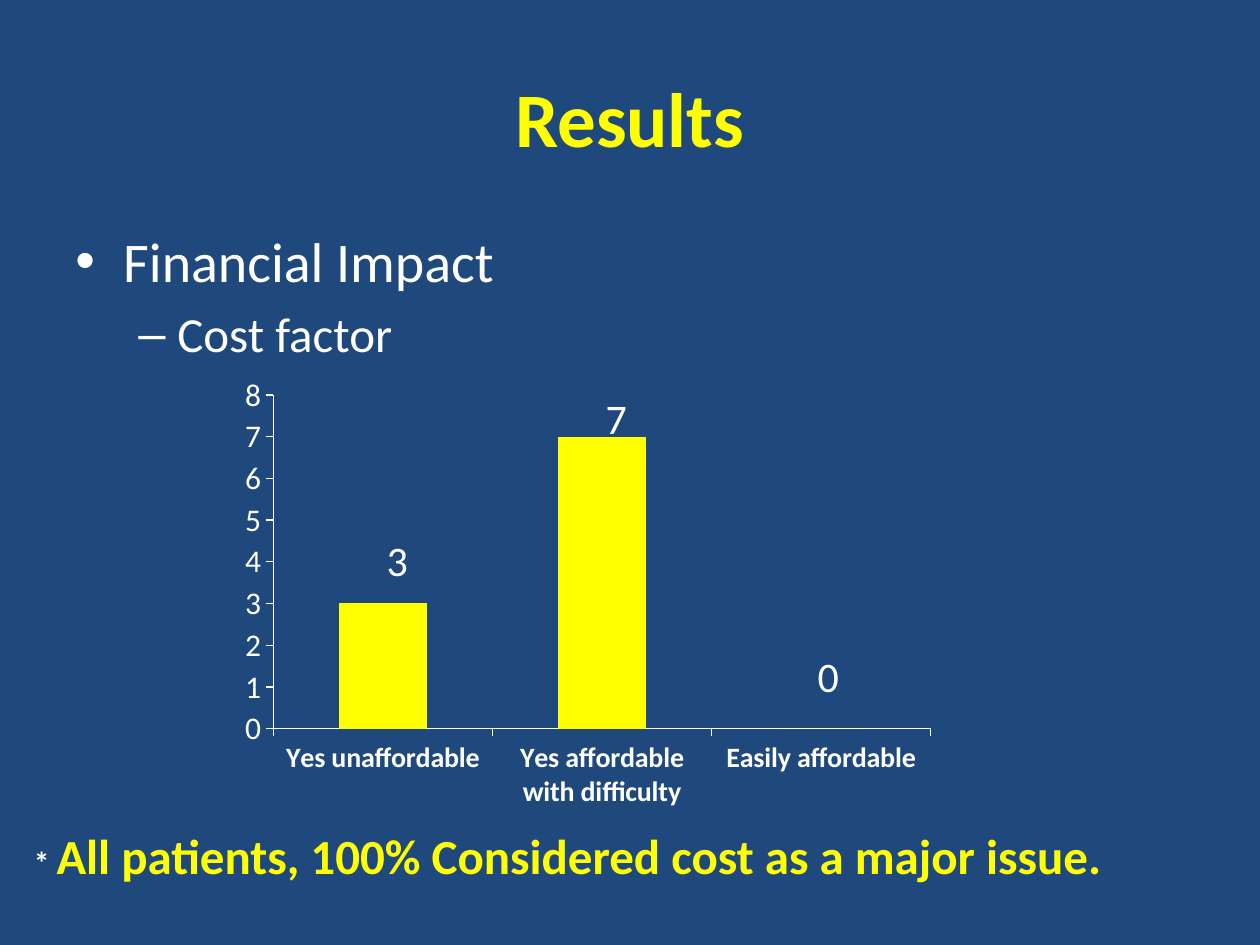
from lxml import etree
from pptx import Presentation
from pptx.chart.data import CategoryChartData
from pptx.dml.color import RGBColor
from pptx.enum import chart as ch, text
from pptx.oxml import parse_xml
from pptx.oxml.ns import nsdecls, qn
from pptx.util import Inches, Pt

NAVY = RGBColor(0x1F, 0x49, 0x7D)
YELLOW = RGBColor(0xFF, 0xFF, 0x00)
WHITE = RGBColor(0xFF, 0xFF, 0xFF)
FONT = "Calibri"
C15 = "http://schemas.microsoft.com/office/drawing/2012/chart"


def style(font, size, color=WHITE, bold=False):
    font.name = FONT
    font.size = Pt(size)
    font.bold = bold
    font.color.rgb = color


def add_box(s, left, top, width, height):
    box = s.shapes.add_textbox(Inches(left), Inches(top), Inches(width), Inches(height))
    tf = box.text_frame
    tf.word_wrap = True
    return tf


def add_title(s, title):
    tf = add_box(s, 0.5, 0.3, 9, 1.25)
    tf.vertical_anchor = text.MSO_ANCHOR.MIDDLE
    p = tf.paragraphs[0]
    p.text = title
    p.alignment = text.PP_ALIGN.CENTER
    style(p.runs[0].font, 44, YELLOW, True)


def format_bullet(p, level, char, size, margin, hanging):
    p.level = level
    p.space_before = Pt(size * 0.2)
    style(p.runs[0].font, size)
    pPr = p._p.get_or_add_pPr()
    pPr.set("marL", str(Inches(margin)))
    pPr.set("indent", str(-Inches(hanging)))
    etree.SubElement(pPr, qn("a:buFont"), typeface="Arial")
    etree.SubElement(pPr, qn("a:buChar"), char=char)


def add_outline(s):
    tf = add_box(s, 0.5, 1.75, 9, 4.95)
    tf.text = "Financial Impact\nCost factor"
    topic, detail = tf.paragraphs
    format_bullet(topic, 0, "•", 32, 0.38, 0.38)
    format_bullet(detail, 1, "–", 28, 0.81, 0.31)


def manual_layout(**values):
    items = "".join(f'<c:{key} val="{val}"/>' for key, val in values.items())
    return parse_xml(
        f'<c:layout {nsdecls("c")}><c:manualLayout>{items}</c:manualLayout></c:layout>'
    )


def hide_leader_lines(dLbls):
    for lines in dLbls.findall(qn("c:showLeaderLines")):
        lines.set("val", "0")
    dLbls.append(parse_xml(
        f'<c:extLst {nsdecls("c")}><c:ext uri="{{CE6537A1-D6FC-4f65-9D91-7224C49458BB}}">'
        f'<c15:showLeaderLines xmlns:c15="{C15}" val="0"/></c:ext></c:extLst>'
    ))


def format_axis(axis, size, bold=False):
    axis.has_major_gridlines = False
    axis.major_tick_mark = ch.XL_TICK_MARK.OUTSIDE
    axis.format.line.color.rgb = WHITE
    style(axis.tick_labels.font, size, bold=bold)


def add_cost_chart(s):
    data = CategoryChartData()
    data.categories = ["Yes unaffordable", "Yes affordable with difficulty", "Easily affordable"]
    data.add_series("Series 1", (3, 7, 0))
    frame = s.shapes.add_chart(
        ch.XL_CHART_TYPE.COLUMN_STACKED,
        Inches(1.83), Inches(2.92), Inches(5.67), Inches(3.58), data,
    )
    chart = frame.chart
    style(chart.font, 10)
    chart.has_legend = False
    chart.has_title = False
    format_axis(chart.category_axis, 16, True)
    format_axis(chart.value_axis, 18)
    chart.value_axis.minimum_scale = 0
    chart.value_axis.maximum_scale = 8
    chart.value_axis.major_unit = 1

    plot = chart.plots[0]
    plot.gap_width = 150
    plot.overlap = 100
    plot.vary_by_categories = False
    series = plot.series[0]
    series.format.fill.solid()
    series.format.fill.fore_color.rgb = YELLOW
    series.data_labels.show_value = True
    style(series.data_labels.font, 24)
    dLbls = series.data_labels._element
    for i, (x, y) in enumerate([(0.02, -0.23), (0.02, -0.36), (0.01, -0.11)]):
        style(series.points[i].data_label.font, 24)
        dLbls.findall(qn("c:dLbl"))[i].insert(1, manual_layout(x=x, y=y))
    hide_leader_lines(dLbls)

    area = chart._chartSpace.chart.plotArea
    for old in area.findall(qn("c:layout")):
        area.remove(old)
    area.insert(0, manual_layout(
        layoutTarget="inner", xMode="edge", yMode="edge", x=0.06, y=0.06, w=0.92, h=0.74))


def add_footnote(s):
    tf = add_box(s, 0.17, 6.5, 9.17, 0.57)
    tf.auto_size = text.MSO_AUTO_SIZE.SHAPE_TO_FIT_TEXT
    p = tf.paragraphs[0]
    p.text = "* "
    style(p.runs[0].font, 18, bold=True)
    r = p.add_run()
    r.text = "All patients, 100% Considered cost as a major issue."
    style(r.font, 28, YELLOW, True)


def main():
    prs = Presentation()
    prs.slide_width, prs.slide_height = Inches(10), Inches(7.5)
    s = prs.slides.add_slide(prs.slide_layouts[6])
    s.background.fill.solid()
    s.background.fill.fore_color.rgb = NAVY
    add_title(s, "Results")
    add_outline(s)
    add_cost_chart(s)
    add_footnote(s)
    prs.save("out.pptx")


if __name__ == "__main__":
    main()
